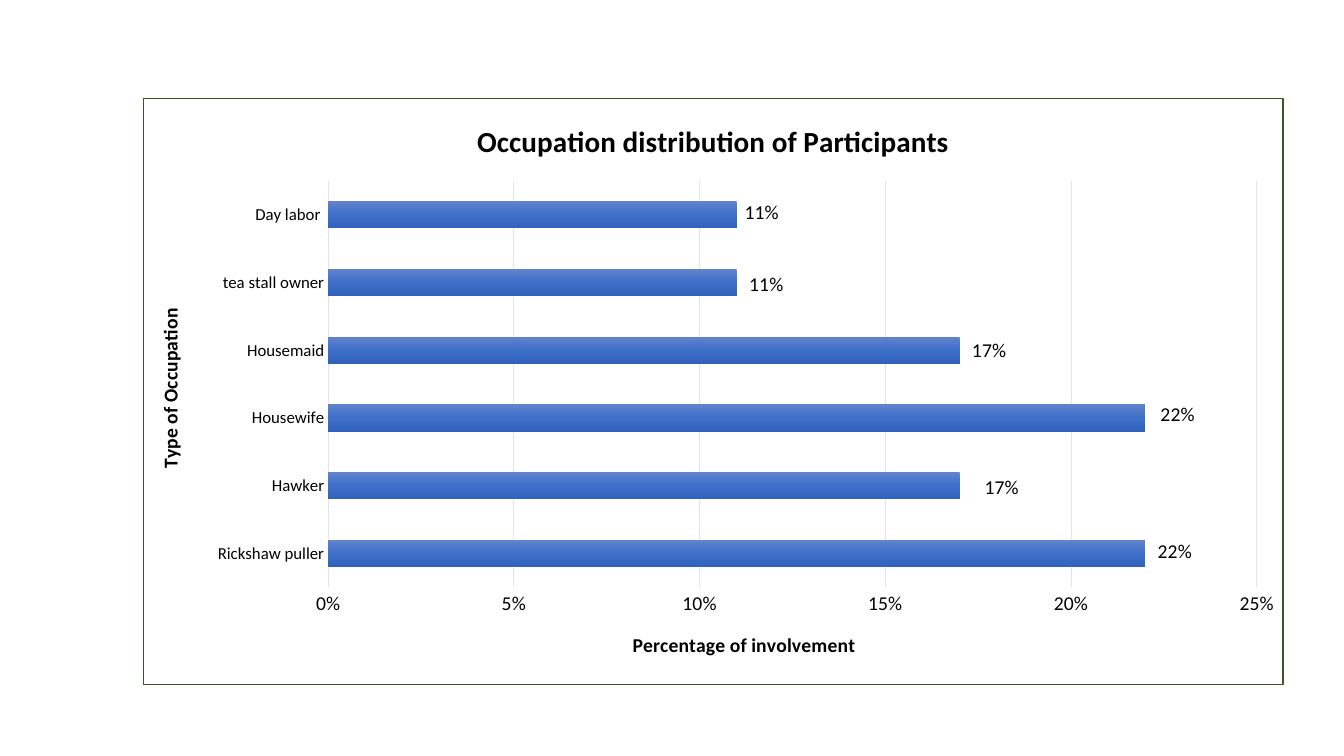
from dataclasses import dataclass

from lxml import etree
from pptx import Presentation
from pptx.chart.data import CategoryChartData
from pptx.dml.color import RGBColor
from pptx.enum.chart import XL_CHART_TYPE, XL_LABEL_POSITION, XL_TICK_MARK
from pptx.oxml import parse_xml
from pptx.oxml.ns import qn
from pptx.util import Inches, Pt

BAR = XL_CHART_TYPE.BAR_CLUSTERED
CENTER = XL_LABEL_POSITION.CENTER
NO_TICK = XL_TICK_MARK.NONE
NS = ('xmlns:c="http://schemas.openxmlformats.org/drawingml/2006/chart" '
      'xmlns:a="http://schemas.openxmlformats.org/drawingml/2006/main"')
NS15 = 'xmlns:c15="http://schemas.microsoft.com/office/drawing/2012/chart"'


@dataclass(frozen=True)
class Theme:
    font: str = "Calibri"
    ink: str = "000000"
    grid: str = "E0E5EB"
    frame: str = "385723"
    back: str = "FFFFFF"
    bar: tuple = ((0, "6183CB"), (50, "3E70CA"), (100, "3062BB"))
    head: float = 20.8
    body: int = 14
    small: int = 12
    base: int = 10
    line: float = 0.75


# Occupation, share, label offset from the bar's end (percent of the chart: x, y)
JOBS = [
    ("Rickshaw puller", 0.22, 2.6, -0.3),
    ("Hawker", 0.17, 3.7, 0.3),
    ("Housewife", 0.22, 2.85, -0.5),
    ("Housemaid", 0.17, 2.6, 0),
    ("tea stall owner", 0.11, 2.6, 0.3),
    ("Day labor ", 0.11, 2.2, -0.3),
]
TOP = 0.25
PLOT = (16.2, 14.1, 81.5, 69.3)


def place(node, index, x, y, w=None, h=None):
    """Give a chart part a manual layout, in percent of the chart."""
    for old in node.findall(qn("c:layout")):
        node.remove(old)
    layout = parse_xml(f"<c:layout {NS}><c:manualLayout/></c:layout>")
    rules = [("xMode", "edge"), ("yMode", "edge")]
    if w:
        rules.insert(0, ("layoutTarget", "inner"))
    if node.tag == qn("c:dLbl"):
        rules = []
    rules += [(k, f"{v / 100:.4f}") for k, v in zip("xywh", (x, y, w, h))
              if v is not None]
    for key, val in rules:
        etree.SubElement(layout[0], qn(f"c:{key}")).set("val", val)
    node.insert(index, layout)


def unlead(node):
    """Turn off the leader lines of a set of data labels."""
    for line in node.findall(qn("c:showLeaderLines")):
        line.set("val", "0")
    node.append(parse_xml(
        f'<c:extLst {NS}><c:ext {NS15} uri="{{CE6537A1-D6FC-4f65-9D91-7224C49458BB}}">'
        '<c15:showLeaderLines val="0"/></c:ext></c:extLst>'))


class Deck:
    def __init__(self, theme):
        self.theme = theme
        self.prs = Presentation()
        self.prs.slide_width = Inches(13.33)
        self.prs.slide_height = Inches(7.5)
        self.slide = self.prs.slides.add_slide(self.prs.slide_layouts[6])

    def style(self, font, size, bold=False):
        font.name, font.size, font.bold = self.theme.font, Pt(size), bold
        font.color.rgb = RGBColor.from_string(self.theme.ink)

    def stroke(self, line):
        line.color.rgb = RGBColor.from_string(self.theme.grid)
        line.width = Pt(self.theme.line)

    def title(self, owner, text, size, x, y, turn=0):
        """Title a chart or an axis; turn is in degrees."""
        title = owner.chart_title if hasattr(owner, "chart_title") else owner.axis_title
        frame = title.text_frame
        frame.text = text
        self.style(frame.paragraphs[0].runs[0].font, size, bold=True)
        node = title._element
        body = next(node.iter(qn("a:bodyPr")))
        body.set("rot", str(turn * 60000))
        body.set("vert", "horz")
        place(node, 1, x, y)

    def chart(self, jobs, x, y, w, h):
        """Add the bar chart; the box is in shares of the slide."""
        data = CategoryChartData(number_format="0%")
        data.categories = [job[0] for job in jobs]
        data.add_series("Series 1", [job[1] for job in jobs])
        wide, high = self.prs.slide_width, self.prs.slide_height
        box = [int(v) for v in (x * wide, y * high, w * wide, h * high)]
        chart = self.slide.shapes.add_chart(BAR, *box, data).chart
        chart.has_legend = False
        self.style(chart.font, self.theme.base)
        place(chart.element.find(".//" + qn("c:plotArea")), 0, *PLOT)
        self.frame(chart)
        self.axes(chart)
        self.bars(chart.plots[0], jobs)
        return chart

    def frame(self, chart):
        look = self.theme
        chart.element.find(qn("c:chart")).addnext(parse_xml(
            f'<c:spPr {NS}><a:solidFill><a:srgbClr val="{look.back}"/></a:solidFill>'
            f'<a:ln w="{Pt(look.line)}"><a:solidFill><a:srgbClr val="{look.frame}"/>'
            '</a:solidFill></a:ln></c:spPr>'))

    def axes(self, chart):
        cat, val = chart.category_axis, chart.value_axis
        for axis, size in ((cat, self.theme.small), (val, self.theme.body)):
            axis.major_tick_mark = axis.minor_tick_mark = NO_TICK
            self.style(axis.tick_labels.font, size)
        self.stroke(cat.format.line)
        val.format.line.fill.background()
        val.minimum_scale, val.maximum_scale, val.major_unit = 0, TOP, 0.05
        val.tick_labels.number_format = "0%"
        val.tick_labels.number_format_is_linked = False
        val.has_major_gridlines = True
        self.stroke(val.major_gridlines.format.line)

    def bars(self, plot, jobs):
        plot.gap_width = 150
        plot.vary_by_categories = False
        series = plot.series[0]
        series.invert_if_negative = False
        stops = "".join(f'<a:gs pos="{pos * 1000}"><a:srgbClr val="{color}"/></a:gs>'
                        for pos, color in self.theme.bar)
        series.format.fill.background()
        look = series._element.find(qn("c:spPr"))
        look.replace(look[0], parse_xml(
            f'<a:gradFill {NS} rotWithShape="1"><a:gsLst>{stops}</a:gsLst>'
            '<a:lin ang="5400000" scaled="0"/></a:gradFill>'))
        labels = series.data_labels
        labels.show_value = True
        labels.number_format = "0%"
        labels.number_format_is_linked = False
        labels.position = CENTER
        self.style(labels.font, self.theme.body)
        for i, (_, share, dx, dy) in enumerate(jobs):
            label = series.points[i].data_label
            self.style(label.font, self.theme.body)
            label.position = CENTER
            node = series._element.findall(".//" + qn("c:dLbl"))[i]
            half = share / TOP * PLOT[2] / 2
            place(node, 1, half + dx, dy)
        unlead(series._element.find(qn("c:dLbls")))


def main():
    theme = Theme()
    deck = Deck(theme)
    chart = deck.chart(JOBS, 0.1065, 0.1293, 0.8485, 0.7773)
    deck.title(chart, "Occupation distribution of Participants", theme.head, 28.8, 2.9)
    deck.title(chart.category_axis, "Type of Occupation", theme.body, 0.8, 35.2, -90)
    deck.title(chart.value_axis, "Percentage of involvement", theme.body, 42.6, 90.2)
    deck.prs.save("out.pptx")


if __name__ == "__main__":
    main()
